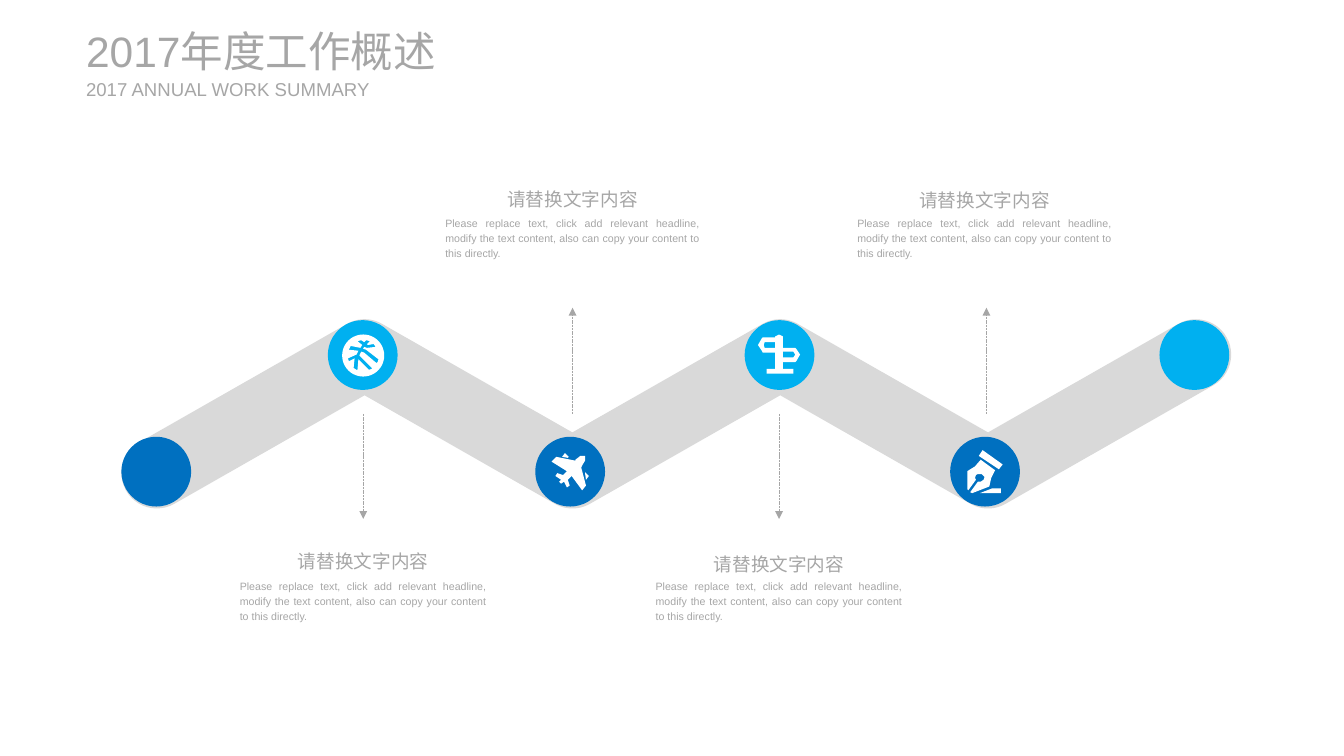
import dataclasses
import math
import pptx
import pptx.dml.color
import pptx.enum.dml
import pptx.enum.shapes
import pptx.enum.text
import pptx.oxml
import pptx.oxml.ns
import pptx.util

ALIGN = pptx.enum.text.PP_ALIGN
SHAPE = pptx.enum.shapes.MSO_SHAPE
RGB = pptx.dml.color.RGBColor.from_string
SCALE = 9144


@dataclasses.dataclass(frozen=True)
class Theme:
    font: str = "Arial"
    text: str = "A6A6A6"
    band: str = "D9D9D9"
    deep: str = "0070C0"
    light: str = "00B0F0"
    icon: str = "FFFFFF"
    title: int = 32
    head: int = 14
    body: int = 8
    line: float = 0.5


THEME = Theme()
HEAD = "请替换文字内容"
BODY = ("Please replace text, click add relevant headline, modify the text "
        "content, also can copy your content to this directly.")

BALL = [
    [(22 + 22 * math.cos(math.tau * n / 48), 22 + 22 * math.sin(math.tau * n / 48))
     for n in range(48)],
    [(9, 12), (7, 16), (17, 17), (16, 19), (15, 21), (6, 25), (7, 28), (13, 25),
     (12, 35), (15, 37), (16, 37), (17, 26), (22, 31), (28, 37), (31, 36), (31, 35),
     (25, 29), (18, 22), (19, 20), (20, 18), (23, 19), (36, 30), (37, 29), (38, 26),
     (25, 16), (22, 15), (23, 13), (26, 14), (35, 13), (33, 10), (27, 11), (26, 10),
     (29, 7), (25, 6), (23, 8), (20, 6), (16, 7), (21, 11), (19, 14)],
]
PLANE = [
    [(35, 3), (35, 8), (32, 13), (31, 15), (36, 34), (32, 39), (21, 24), (17, 28),
     (19, 34), (16, 36), (13, 30), (10, 32), (8, 30), (10, 28), (4, 24), (6, 21),
     (12, 23), (16, 19), (0, 9), (5, 4), (25, 8), (25, 7), (30, 3)],
    [(39, 24), (35, 20), (35, 21), (36, 28)],
    [(14, 0), (11, 4), (17, 5), (18, 4)],
]
SIGN = [
    [(26, 14), (39, 14), (40, 15), (44, 21), (40, 28), (39, 29), (26, 29), (26, 36),
     (37, 36), (37, 41), (9, 41), (9, 36), (18, 36), (18, 19), (5, 19), (4, 17),
     (0, 11), (4, 4), (5, 3), (18, 3), (18, 2), (22, 0), (26, 2)],
    [(18, 8), (7, 8), (6, 11), (7, 14), (18, 14)],
    [(37, 18), (26, 18), (26, 24), (37, 24), (39, 21)],
]
NIB = [
    [(1, 42), (0, 41), (0, 22), (8, 17), (14, 10), (18, 13), (29, 21), (25, 29),
     (23, 38), (5, 45), (3, 44), (11, 33), (14, 33), (17, 31), (18, 28), (15, 25),
     (11, 25), (9, 26), (8, 29), (9, 31)],
    [(13, 45), (35, 45), (35, 40), (26, 40)],
    [(33, 20), (37, 15), (16, 0), (12, 6)],
]

DOTS = [(127, 457, THEME.deep), (343, 335, THEME.light), (560, 457, THEME.deep),
        (779, 335, THEME.light), (994, 457, THEME.deep), (1213, 335, THEME.light)]
ICONS = [(358, 350, BALL), (577, 474, PLANE), (793, 350, SIGN), (1012, 471, NIB)]
RAYS = [(380, 433, 110), (599, 433, -111), (815, 433, 110), (1032, 433, -111)]
NOTES = [(241, 566, 278, 90), (456, 187, 286, 89),
         (676, 569, 278, 87), (887, 188, 286, 88)]


def emu(*sizes):
    return [pptx.util.Emu(round(size * SCALE)) for size in sizes]


def apply(thing, form):
    for name, value in form.items():
        setattr(thing, name, value)


def paint(shape, tint):
    shape.shadow.inherit = False
    shape.fill.solid()
    shape.fill.fore_color.rgb = RGB(tint)
    shape.line.fill.background()


def draw(slide, left, top, rings, tint):
    rings = [[emu(left + x, top + y) for x, y in ring] for ring in rings]
    pen = slide.shapes.build_freeform(*rings[0][0], scale=1.0)
    for count, ring in enumerate(rings):
        if count:
            pen.move_to(*ring[0])
        pen.add_line_segments(ring[1:], close=True)
    paint(pen.convert_to_shape(), tint)


def write(slide, box, words, size, frame, para):
    field = slide.shapes.add_textbox(*emu(*box)).text_frame
    apply(field, {"word_wrap": True, **frame})
    line = field.paragraphs[0]
    apply(line, para)
    run = line.add_run()
    run.text = words
    apply(run.font, {"name": THEME.font, "size": pptx.util.Pt(size)})
    run.font.color.rgb = RGB(THEME.text)


def title(slide, box):
    left, top, wide, high = box
    sides = ("margin_left", "margin_top", "margin_right", "margin_bottom")
    frame = {side: 0 for side in sides}
    frame["vertical_anchor"] = pptx.enum.text.MSO_ANCHOR.MIDDLE
    write(slide, (left, top, wide, 54), "2017年度工作概述", THEME.title, frame, {})
    write(slide, (left, top + high - 24, wide, 24), "2017 ANNUAL WORK SUMMARY",
          THEME.head, frame, {})


def band(slide, box, half=37, count=6):
    left, top, wide, high = box
    step = (wide - 2 * half) / (count - 1)
    knots = [(half + step * n, half if n % 2 else high - half) for n in range(count)]
    loop = knots + knots[-2:0:-1]
    ring = []
    for n, (x, y) in enumerate(loop):
        back, ahead = loop[n - 1], loop[(n + 1) % len(loop)]
        start = math.atan2(y - back[1], x - back[0])
        turn = (math.atan2(ahead[1] - y, ahead[0] - x) - start) % math.tau
        if turn < 4:
            arc = [(start + turn * k / 24, half) for k in range(25)]
        else:
            turn -= math.tau
            arc = [(start + turn / 2, half / math.cos(turn / 2))]
        ring += [(x + far * math.sin(way), y - far * math.cos(way)) for way, far in arc]
    draw(slide, left, top, [ring], THEME.band)


def dot(slide, box, tint):
    paint(slide.shapes.add_shape(SHAPE.OVAL, *emu(*box)), tint)


def ray(slide, left, top, reach):
    kind = pptx.enum.shapes.MSO_CONNECTOR.STRAIGHT
    link = slide.shapes.add_connector(kind, *emu(left, top, left, top + reach))
    link.line.color.rgb = RGB(THEME.text)
    apply(link.line, {"width": pptx.util.Pt(THEME.line),
                      "dash_style": pptx.enum.dml.MSO_LINE.SQUARE_DOT})
    tag = pptx.oxml.ns.qn
    props = link._element.spPr
    tip = props.find(tag("a:ln")).makeelement(tag("a:tailEnd"), {"type": "triangle"})
    props.find(tag("a:ln")).append(tip)
    props.append(props.makeelement(tag("a:effectLst"), {}))


def note(slide, box):
    left, top, wide, high = box
    write(slide, (left, top, wide, 36), HEAD, THEME.head, {},
          {"alignment": ALIGN.CENTER, "line_spacing": 1.2})
    write(slide, (left, top + high - 57, wide, 57), BODY, THEME.body, {},
          {"alignment": ALIGN.JUSTIFY, "line_spacing": 1.2})


def main():
    deck = pptx.Presentation()
    wide, high = emu(1406, 791)
    apply(deck, {"slide_width": wide, "slide_height": high})
    slide = deck.slides.add_slide(deck.slide_layouts[6])
    band(slide, (127, 334, 1161, 198))
    for left, top, tint in DOTS:
        dot(slide, (left, top, 73, 73), tint)
    for left, top, rings in ICONS:
        draw(slide, left, top, rings, THEME.icon)
    for spot in RAYS:
        ray(slide, *spot)
    for box in NOTES:
        note(slide, box)
    title(slide, (90, 26, 432, 79))
    deck.save("out.pptx")


if __name__ == "__main__":
    main()
